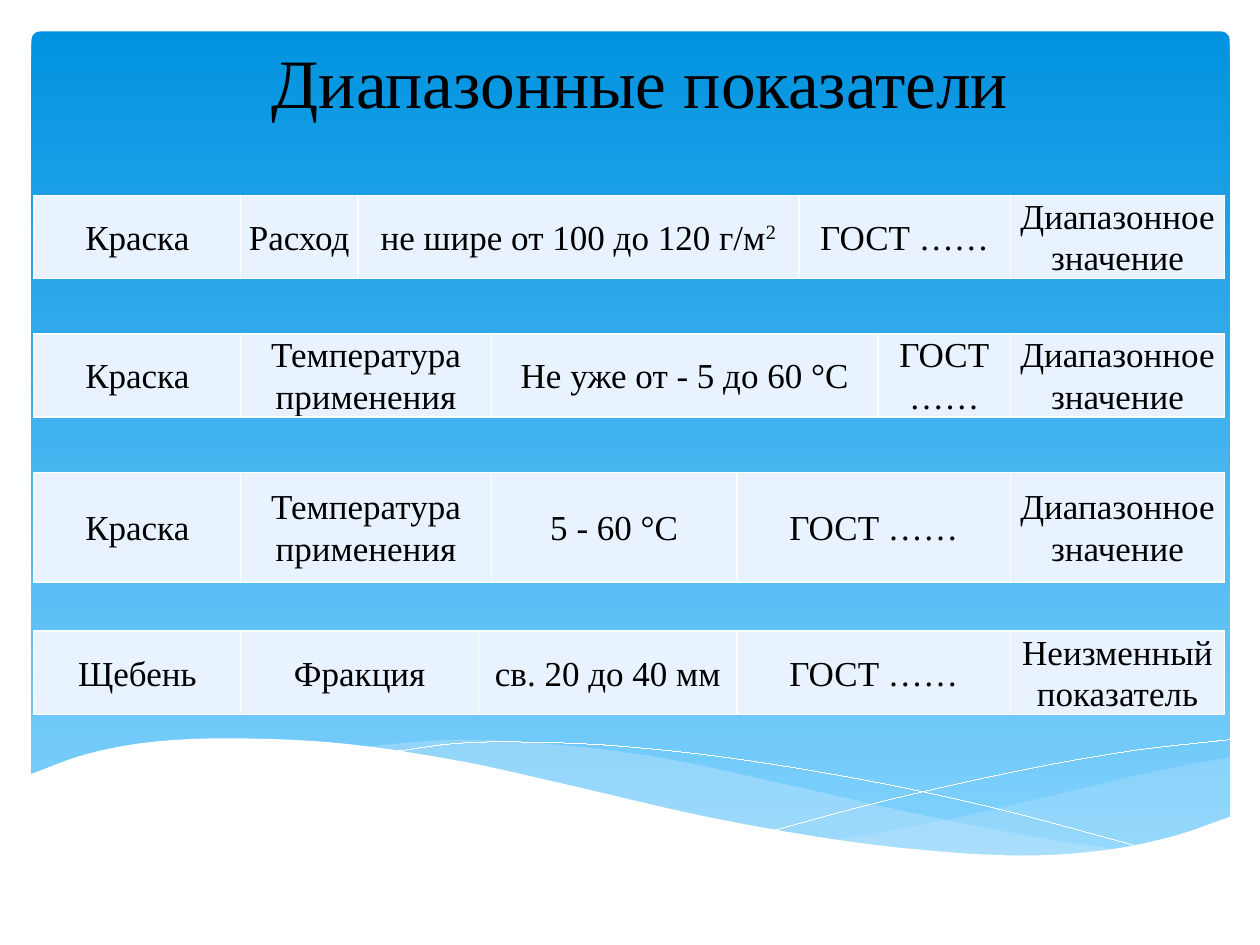
from itertools import pairwise

from lxml.etree import SubElement
from pptx import Presentation
from pptx.dml.color import RGBColor
from pptx.enum.shapes import MSO_SHAPE
from pptx.enum.text import MSO_ANCHOR, MSO_AUTO_SIZE, PP_ALIGN
from pptx.oxml.ns import qn
from pptx.util import Inches, Pt

COLORS = {
    "sky_top": "0293E0",
    "sky_bottom": "83D3FE",
    "wave": "C6E7FC",
    "white": "FFFFFF",
    "cell": "E8F3FF",
    "text": "000000",
}
FONT = "Times New Roman"
STEPS_PER_SPAN = 8

RIGHT_CREST = [(6.62, 6.67), (7.54, 6.5), (8.62, 6.25), (9.22, 6.11), (9.77, 6.01)]
RIGHT_TROUGH = [(6.62, 6.67), (7.33, 6.76), (8.04, 6.8), (8.73, 6.76), (9.29, 6.65),
                (9.77, 6.49)]
MIDDLE_CREST = [(2.87, 5.93), (3.28, 5.89), (3.71, 5.87), (4.42, 5.91), (5.28, 6.02),
                (6.3, 6.24), (7.42, 6.49), (8.38, 6.67), (8.94, 6.75)]
MIDDLE_TROUGH = [(2.87, 5.93), (3.63, 6.04), (4.5, 6.24), (5.67, 6.5), (6.66, 6.68),
                 (7.49, 6.78), (8.19, 6.8), (8.94, 6.75)]
FRONT_CREST = [(0.23, 6.15), (0.67, 5.99), (1.19, 5.89), (1.85, 5.86), (2.71, 5.9),
               (3.65, 6.04), (4.47, 6.22), (5.55, 6.47), (6.48, 6.64), (7.26, 6.74),
               (8.09, 6.79), (8.75, 6.75), (9.3, 6.64), (9.77, 6.48)]
FRONT_BASE = [(0.23, 7.31), (9.77, 7.31)]
FALLING_CURVE = [(3.1, 5.97), (3.63, 5.9), (4.17, 5.89), (4.89, 5.92), (5.82, 6.02),
                 (6.96, 6.21), (7.96, 6.43), (9.08, 6.73)]
RISING_CURVE = [(6.14, 6.59), (6.96, 6.37), (8.07, 6.12), (8.97, 5.96), (9.76, 5.87)]

TABLE_LEFT, TABLE_WIDTH = 0.27, 9.45
MATERIAL_WIDTH, KIND_WIDTH = 1.64, 1.7
LOW_ROW, TALL_ROW = 0.37, 0.87
STANDARD = "ГОСТ ……"
RANGE_KIND, FIXED_KIND = "Диапазонное значение", "Неизменный показатель"
INDICATORS = [
    {"top": 1.55, "row": LOW_ROW, "middle": (0.93, 3.5), "kind": RANGE_KIND,
     "facts": ("Краска", "Расход", "не шире от 100 до 120 г/м^2")},
    {"top": 2.65, "row": LOW_ROW, "middle": (1.99, 3.07), "kind": RANGE_KIND,
     "facts": ("Краска", "Температура применения", "Не уже от - 5 до 60 °С")},
    {"top": 3.75, "row": TALL_ROW, "middle": (1.99, 1.95), "kind": RANGE_KIND,
     "facts": ("Краска", "Температура применения", "5 - 60 °С")},
    {"top": 5.01, "row": LOW_ROW, "middle": (1.89, 2.05), "kind": FIXED_KIND,
     "facts": ("Щебень", "Фракция", "св. 20 до 40 мм")},
]


def color(name):
    """Return the named palette colour."""
    return RGBColor.from_string(COLORS[name])


def smooth(knots):
    """Return points on a cubic Hermite curve through knots ordered by x."""
    before, after = [knots[0], *knots[:-1]], [*knots[1:], knots[-1]]
    slopes = [(y1 - y0) / (x1 - x0) for (x0, y0), (x1, y1) in zip(before, after)]
    points = [knots[0]]
    for ((x0, y0), slope0), ((x1, y1), slope1) in pairwise(zip(knots, slopes)):
        span = x1 - x0
        for step in range(1, STEPS_PER_SPAN + 1):
            t = step / STEPS_PER_SPAN
            ease = t * t * (3 - 2 * t)
            bend = t * (1 - t) * span * (slope0 * (1 - t) - slope1 * t)
            points.append((x0 + span * t, y0 + (y1 - y0) * ease + bend))
    return points


def style_text(paragraph, size):
    """Centre a paragraph and set its font."""
    paragraph.alignment = PP_ALIGN.CENTER
    paragraph.font.name = FONT
    paragraph.font.size = Pt(size)
    paragraph.font.color.rgb = color("text")


def add_sky(slide):
    """Add the rounded gradient panel."""
    sky = slide.shapes.add_shape(
        MSO_SHAPE.ROUNDED_RECTANGLE, Inches(0.25), Inches(0.25), Inches(9.51), Inches(6.6))
    sky.adjustments[0] = 0.01
    sky.shadow.inherit = False
    sky.line.fill.background()
    sky.fill.gradient()
    sky.fill.gradient_angle = 270
    for stop, name in zip(sky.fill.gradient_stops, ("sky_top", "sky_bottom")):
        stop.color.rgb = color(name)


def add_outline(slide, points, close):
    """Add a shadowless freeform through points given in inches."""
    start, *rest = [(Inches(x), Inches(y)) for x, y in points]
    builder = slide.shapes.build_freeform(*start)
    builder.add_line_segments(rest, close=close)
    outline = builder.convert_to_shape()
    outline.shadow.inherit = False
    return outline


def add_wave(slide, crest, trough, fill, opacity=100):
    """Fill the band between two smooth edges, with opacity in percent."""
    wave = add_outline(slide, smooth(crest) + smooth(trough)[::-1], True)
    wave.line.fill.background()
    wave.fill.solid()
    wave.fill.fore_color.rgb = color(fill)
    if opacity < 100:
        tint = wave.fill._xPr.find(qn("a:solidFill"))[0]
        SubElement(tint, qn("a:alpha")).set("val", str(opacity * 1000))


def add_curve(slide, knots):
    """Add a smooth white hairline."""
    curve = add_outline(slide, smooth(knots), False)
    curve.fill.background()
    curve.line.color.rgb = color("white")
    curve.line.width = Pt(0.01)


def place_title(slide, heading):
    """Place the title in front of the backdrop."""
    title = slide.shapes.title
    slide.shapes._spTree.append(title._element)
    title.left, title.top = Inches(0.83), Inches(0.28)
    title.width, title.height = Inches(8.5), Inches(0.74)
    frame = title.text_frame
    frame.text = heading
    frame.auto_size = MSO_AUTO_SIZE.NONE
    frame.vertical_anchor = MSO_ANCHOR.BOTTOM
    style_text(frame.paragraphs[0], 39.6)


def add_borders(cell):
    """Draw one-point white borders around a cell."""
    properties = cell._tc.get_or_add_tcPr()
    for side in ("lnL", "lnR", "lnT", "lnB"):
        border = SubElement(properties, qn(f"a:{side}"), w=str(Pt(1)))
        fill = SubElement(border, qn("a:solidFill"))
        SubElement(fill, qn("a:srgbClr"), val=COLORS["white"])


def fill_cell(cell, wording):
    """Format a cell and write its text, with a superscript after a caret."""
    add_borders(cell)
    cell.fill.solid()
    cell.fill.fore_color.rgb = color("cell")
    cell.vertical_anchor = MSO_ANCHOR.MIDDLE
    cell.margin_left = cell.margin_right = Inches(0.06)
    cell.margin_top = cell.margin_bottom = 0
    paragraph = cell.text_frame.paragraphs[0]
    style_text(paragraph, 20)
    paragraph.line_spacing = 1.07
    base, _, power = wording.partition("^")
    paragraph.add_run().text = base
    if power:
        superscript = paragraph.add_run()
        superscript.text = power
        superscript.font._element.set("baseline", "30000")


def add_indicator(slide, top, row, middle, kind, facts):
    """Add a one-row table whose standard column takes the spare width."""
    standard_width = TABLE_WIDTH - MATERIAL_WIDTH - sum(middle) - KIND_WIDTH
    widths = [MATERIAL_WIDTH, *middle, standard_width, KIND_WIDTH]
    wordings = [*facts, STANDARD, kind]
    frame = slide.shapes.add_table(
        1, len(widths), Inches(TABLE_LEFT), Inches(top), Inches(TABLE_WIDTH), Inches(row))
    table = frame.table
    table.first_row = table.horz_banding = False
    for column, width, cell, wording in zip(
            table.columns, widths, table.rows[0].cells, wordings):
        column.width = Inches(width)
        fill_cell(cell, wording)
    frame.height = Inches(max(row, 0.69))


def main():
    """Build and save the slide."""
    deck = Presentation()
    deck.slide_width, deck.slide_height = Inches(10), Inches(7.5)
    slide = deck.slides.add_slide(deck.slide_layouts[5])
    add_sky(slide)
    add_wave(slide, RIGHT_CREST, RIGHT_TROUGH, "wave", 29)
    add_wave(slide, MIDDLE_CREST, MIDDLE_TROUGH, "wave", 40)
    for knots in (FALLING_CURVE, RISING_CURVE):
        add_curve(slide, knots)
    add_wave(slide, FRONT_CREST, FRONT_BASE, "white")
    place_title(slide, "Диапазонные показатели")
    for indicator in INDICATORS:
        add_indicator(slide, **indicator)
    deck.save("out.pptx")


if __name__ == "__main__":
    main()
